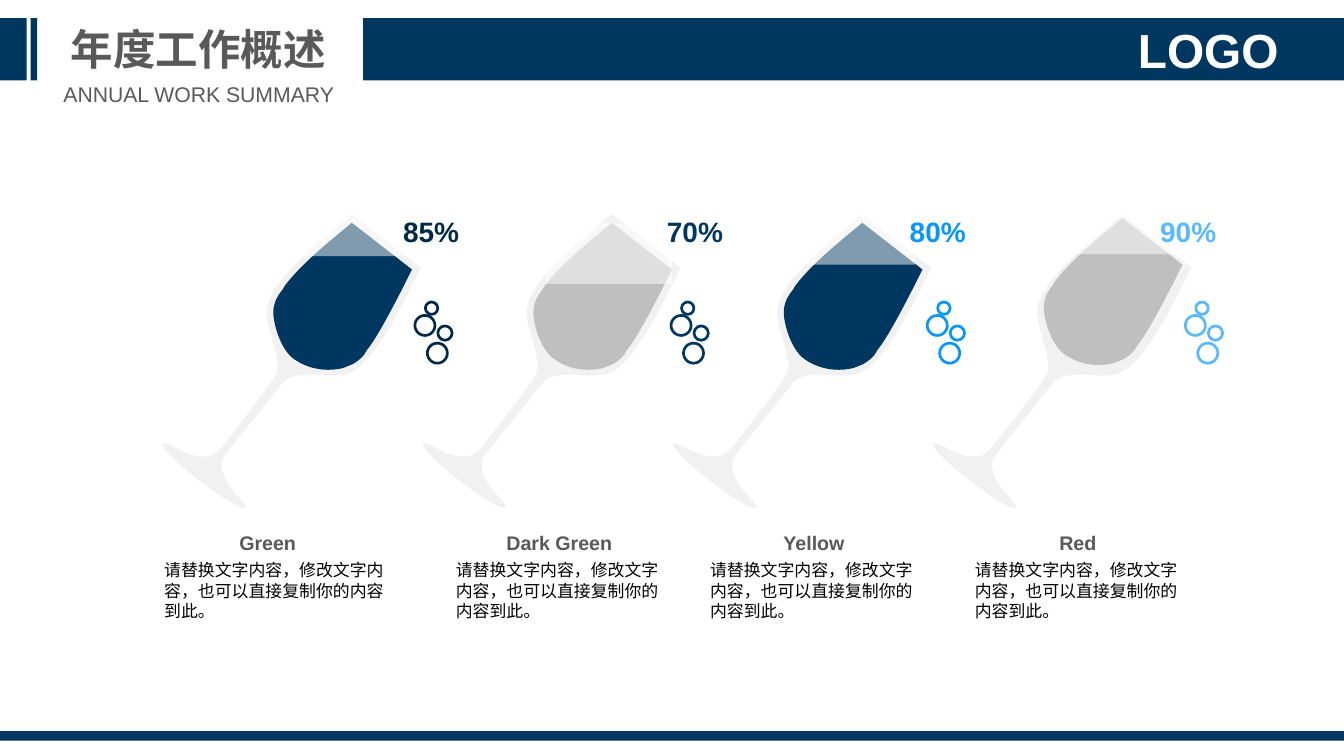
from lxml import etree
from pptx import Presentation
from pptx import util as u
from pptx.dml.color import RGBColor
from pptx.enum import shapes, text
from pptx.oxml.ns import qn

PX = 9144  # 100 px to the inch
NAVY = RGBColor(0x00, 0x37, 0x60)
DARK_NAVY = RGBColor(0x00, 0x29, 0x48)
BLUE = RGBColor(0x07, 0x95, 0xFF)
LIGHT_BLUE = RGBColor(0x59, 0xB8, 0xFF)
SILVER = RGBColor(0xBF, 0xBF, 0xBF)
GLASS_GREY = RGBColor(0xF1, 0xF1, 0xF1)
TEXT_GREY = RGBColor(0x59, 0x59, 0x59)
BLACK = RGBColor(0, 0, 0)
WHITE = RGBColor(0xFF, 0xFF, 0xFF)

deck = Presentation()
deck.slide_width, deck.slide_height = u.Emu(1406 * PX), u.Emu(791 * PX)
page = deck.slides.add_slide(deck.slide_layouts[6])


def add_text(words, at, size, color, bold=False, align=text.PP_ALIGN.CENTER,
             spacing=1.0, wrap=True, inset=True, anchor=text.MSO_ANCHOR.TOP):
    box = page.shapes.add_textbox(*[u.Emu(n * PX) for n in at])
    frame = box.text_frame
    frame.word_wrap = wrap
    frame.auto_size = text.MSO_AUTO_SIZE.SHAPE_TO_FIT_TEXT
    frame.vertical_anchor = anchor
    if not inset:
        frame.margin_left = frame.margin_right = 0
        frame.margin_top = frame.margin_bottom = 0
    para = frame.paragraphs[0]
    para.alignment, para.line_spacing = align, spacing
    span = para.add_run()
    span.text = words
    span.font.name, span.font.size, span.font.bold = "Arial", u.Pt(size), bold
    span.font.color.rgb = color


def add_figure(kind, at, fill, line=None):
    """Draw a preset shape, or an outline of 2-number lines and 6-number curves."""
    if kind == "outline":
        dx, dy, start, *moves = at
        knots = [((m[-2] + dx) * PX, (m[-1] + dy) * PX) for m in moves]
        builder = page.shapes.build_freeform((start[0] + dx) * PX, (start[1] + dy) * PX)
        builder.add_line_segments(knots, close=True)
        shape = builder.convert_to_shape()
        # Turn the straight segments of 6-number moves into curves
        segments = list(shape.element.iter(qn("a:lnTo")))
        for segment, move in zip(segments, moves):
            if len(move) == 6:
                segment.tag = qn("a:cubicBezTo")
                for index, (x, y) in enumerate([move[:2], move[2:4]]):
                    control = etree.Element(qn("a:pt"))
                    control.set("x", str((x + dx) * PX - shape.left))
                    control.set("y", str((y + dy) * PX - shape.top))
                    segment.insert(index, control)
    else:
        shape = page.shapes.add_shape(kind, *[u.Emu(n * PX) for n in at])
    shape.shadow.inherit = False
    shape.fill.solid()
    shape.fill.fore_color.rgb = fill
    if line is None:
        shape.line.fill.background()
    else:
        shape.line.color.rgb, shape.line.width = line, u.Pt(2)
    return shape


RECT, OVAL = shapes.MSO_SHAPE.RECTANGLE, shapes.MSO_SHAPE.OVAL

# Outlines and bubbles of the first glass; the others are shifted
glass = [
    (326, 392), (356, 393, 366, 398, 389, 370), (412, 341, 440, 280, 440, 280),
    (368, 224), (368, 224, 315, 266, 293, 295), (271, 325, 280, 334, 287, 362),
    (294, 388, 289, 392, 285, 398), (273, 416, 235, 464, 231, 469),
    (230, 470, 228, 472, 225, 474), (222, 477, 211, 482, 188, 471),
    (178, 465, 172, 463, 170, 464), (168, 467, 185, 485, 209, 503),
    (233, 522, 254, 534, 257, 531), (258, 529, 253, 523, 246, 516),
    (229, 496, 231, 484, 233, 480), (237, 474), (293, 404),
    (297, 398, 301, 392, 326, 392),
]
wine = [
    (384, 366), (397, 351, 427, 290, 431, 282), (368, 233),
    (362, 239, 319, 271, 298, 299), (295, 304),
    (292, 307, 291, 310, 289, 313), (287, 318, 286, 322, 286, 325),
    (285, 334, 292, 365, 308, 376), (324, 387, 343, 389, 359, 385),
    (369, 381), (374, 378, 378, 375, 381, 371),
]
bubbles = [(447, 359, 21), (458, 341, 15), (434, 330, 21), (445, 316, 13)]
body = "请替换文字内容，修改文字内容，也可以直接复制你的内容到此。"

# name, percent, accent, wine colour, glass shift, wine rise, veil,
# bubble shift, percent left, label left and width, body left and width
glasses = [
    ("Green", "85%", DARK_NAVY, NAVY, 0, 0, (288, 204, 149, 64),
     0, 394, (240, 80), (162, 253)),
    ("Dark Green", "70%", NAVY, SILVER, 272, 0, (571, 233, 132, 64),
     268, 670, (519, 132), (467, 236)),
    ("Yellow", "80%", BLUE, NAVY, 534, 0, (825, 213, 132, 64),
     536, 924, (809, 85), (733, 236)),
    ("Red", "90%", LIGHT_BLUE, SILVER, 806, -5, (1094, 202, 149, 64),
     806, 1186, (1098, 59), (1010, 236)),
]
for (name, percent, accent, wine_color, shift, rise, veil_at,
     bubble_shift, percent_left, label, note) in glasses:
    add_figure("outline", [shift, 0, *glass], GLASS_GREY)
    add_figure("outline", [shift, rise, *wine], wine_color)

    # Half-transparent veil over the empty part
    veil = add_figure(RECT, veil_at, WHITE)
    veil_color = next(veil.element.iter(qn("a:srgbClr")))
    etree.SubElement(veil_color, qn("a:alpha")).set("val", "50000")

    for left, top, size in bubbles:
        add_figure(OVAL, (left + bubble_shift, top, size, size), WHITE, accent)

    add_text(name, (label[0], 538, label[1], 47), 14.8, TEXT_GREY, bold=True,
             spacing=1.5, wrap=False)
    add_text(body, (note[0], 581, note[1], 74), 12.7, BLACK, align=text.PP_ALIGN.LEFT)
    add_text(percent, (percent_left, 229, 114, 35), 21.1, accent, bold=True, spacing=0.7)

# Header and footer bars
for bar in [(380, 19, 1026, 65), (0, 19, 28, 65), (32, 19, 7, 65), (0, 765, 1406, 10)]:
    add_figure(RECT, bar, NAVY)

# Header texts
add_text("年度工作概述", (63, 19, 289, 64), 32, TEXT_GREY, bold=True, wrap=False)
add_text("LOGO", (1160, 21, 208, 61), 36, WHITE, bold=True, inset=False,
         anchor=text.MSO_ANCHOR.MIDDLE)
add_text("ANNUAL WORK SUMMARY", (55, 80, 306, 37), 16, TEXT_GREY, wrap=False)

deck.save("out.pptx")
